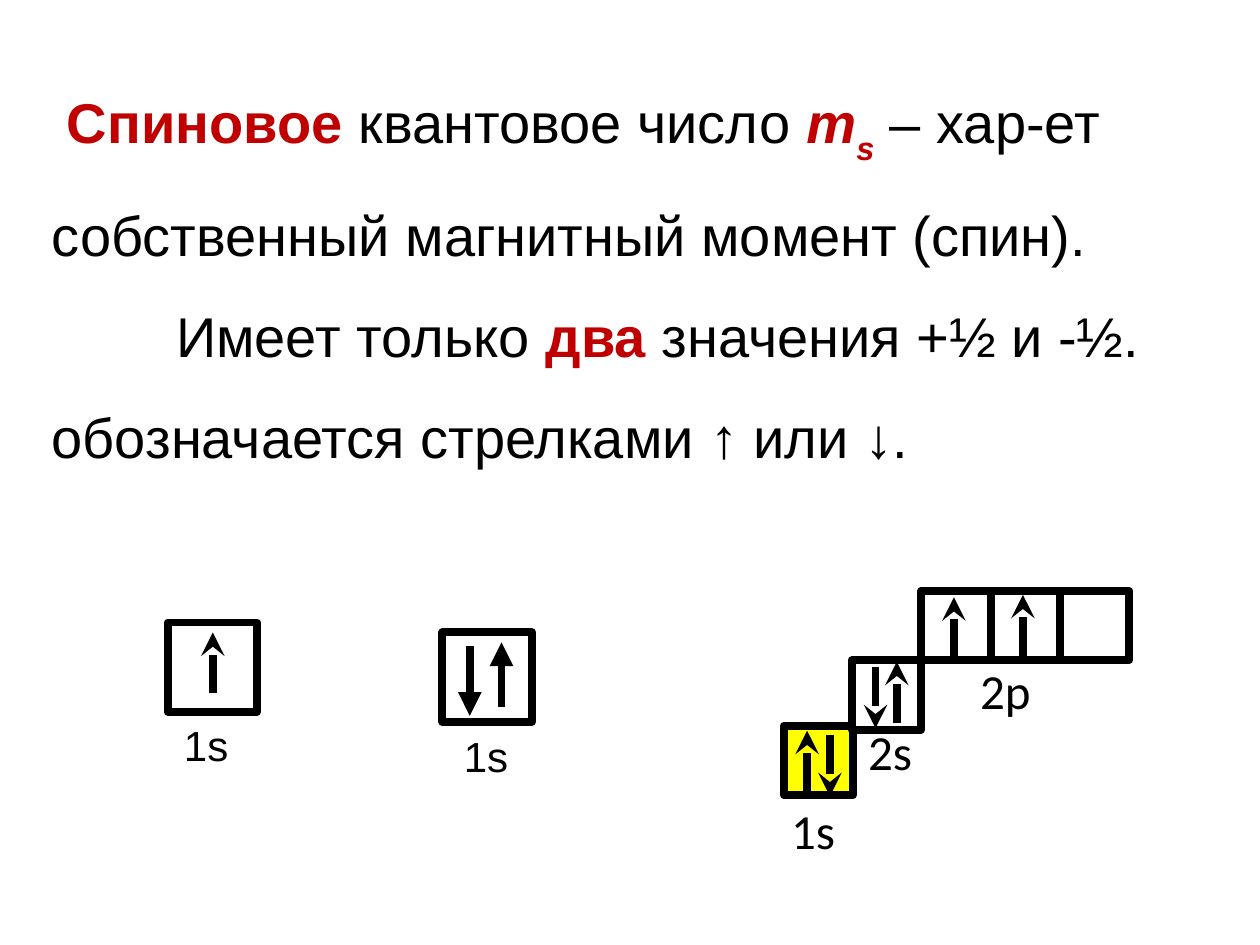
from lxml import etree
from pptx import Presentation
from pptx.dml.color import RGBColor
from pptx.enum.shapes import MSO_CONNECTOR, MSO_SHAPE
from pptx.enum.text import MSO_ANCHOR, PP_ALIGN
from pptx.oxml.ns import qn
from pptx.util import Cm, Pt

RECTANGLE = MSO_SHAPE.RECTANGLE
STRAIGHT = MSO_CONNECTOR.STRAIGHT
TOP, MIDDLE = MSO_ANCHOR.TOP, MSO_ANCHOR.MIDDLE
LEFT, JUSTIFY = PP_ALIGN.LEFT, PP_ALIGN.JUSTIFY

BLACK, WHITE, RED, YELLOW = "000000", "FFFFFF", "C00000", "FFFF00"
LINE_WIDTH = 4.5
LARGE, CELL = 1.8, 1.4

TERM = {"color": RED, "bold": True}
SYMBOL = TERM | {"italic": True}
ARROW_SIGN = {"font": "Times New Roman"}

# Each paragraph: alignment, first-line indent (cm), runs of (text, format)
DEFINITION = [
    (LEFT, 0.31, [
        ("Спиновое", TERM), (" квантовое число ", {}), ("m", SYMBOL),
        ("s", SYMBOL | {"baseline": -30000}),
        (" – хар-ет собственный магнитный момент (спин).", {})]),
    (JUSTIFY, 2.51, [
        ("Имеет только ", {}), ("два", TERM), (" значения +½ и -½.", {})]),
    (JUSTIFY, 0, [
        ("обозначается стрелками ", {}), ("↑", ARROW_SIGN), (" или ", {}),
        ("↓", ARROW_SIGN), (".", {})]),
]

# Orbitals: left, top, cell size, number of cells, fill
ORBITALS = [
    (3.38, 12.55, LARGE, 1, None),
    (8.92, 12.75, LARGE, 1, WHITE),
    (15.8, 14.63, CELL, 1, YELLOW),
    (17.17, 13.31, CELL, 1, WHITE),
    (18.57, 11.91, CELL, 3, None),
]

# Labels: text, left, top, width, height, font, size
LABELS = [
    ("1s", 3.66, 14.5, 1.19, 0.99, "Arial", 24),
    ("1s", 9.3, 14.73, 1.19, 0.99, "Arial", 24),
    ("1s", 15.9, 16.13, 1.8, 1.75, "Calibri", 28),
    ("2s", 17.45, 14.55, 1.65, 1.65, "Calibri", 28),
    ("2р", 19.71, 13.31, 1.93, 1.75, "Calibri", 28),
]

# Electron spins: x, y of the tail, y of the tip, arrowhead
SPINS = [
    (4.29, 13.97, 12.75, "stealth"),
    (9.47, 13.03, 14.43, "triangle"),
    (10.11, 14.25, 12.95, "triangle"),
    (16.27, 15.98, 14.73, "stealth"),
    (16.73, 14.81, 16.05, "stealth"),
    (17.65, 13.44, 14.68, "stealth"),
    (18.08, 14.58, 13.34, "stealth"),
    (19.23, 13.28, 12.04, "stealth"),
    (20.62, 13.23, 11.99, "stealth"),
]


def rgb(color):
    return RGBColor.from_string(color)


def add_run(paragraph, text, font="Arial", size=32, color=BLACK,
            bold=False, italic=False, baseline=None):
    run = paragraph.add_run()
    run.text = text
    run.font.name = font
    run.font.size = Pt(size)
    run.font.bold = bold
    run.font.italic = italic
    run.font.color.rgb = rgb(color)
    if baseline is not None:
        run.font._element.set("baseline", str(baseline))


def add_text(slide, paragraphs, left, top, width, height,
             inset=(0.05, 0), anchor=TOP, spacing=1.0, **run_format):
    frame = slide.shapes.add_textbox(
        Cm(left), Cm(top), Cm(width), Cm(height)).text_frame
    frame.word_wrap = True
    frame.vertical_anchor = anchor
    frame.margin_left = frame.margin_right = Cm(inset[0])
    frame.margin_top = frame.margin_bottom = Cm(inset[1])
    for index, (alignment, indent, runs) in enumerate(paragraphs):
        paragraph = frame.add_paragraph() if index else frame.paragraphs[0]
        paragraph.alignment = alignment
        paragraph.line_spacing = spacing
        paragraph._p.get_or_add_pPr().set("indent", str(Cm(indent)))
        for text, own_format in runs:
            add_run(paragraph, text, **(run_format | own_format))


def add_vertical_line(slide, x, start, end, head=None):
    connector = slide.shapes.add_connector(
        STRAIGHT, Cm(x), Cm(start), Cm(x), Cm(end))
    connector.line.color.rgb = rgb(BLACK)
    connector.line.width = Pt(LINE_WIDTH)
    if head:
        etree.SubElement(connector.line._get_or_add_ln(),
                         qn("a:tailEnd"), type=head)
    etree.SubElement(connector._element.spPr, qn("a:effectLst"))


def add_orbital(slide, left, top, size, cells, fill):
    """Draw a row of cells as one frame with dividers."""
    shape = slide.shapes.add_shape(
        RECTANGLE, Cm(left), Cm(top), Cm(size * cells), Cm(size))
    shape.shadow.inherit = False
    shape.line.color.rgb = rgb(BLACK)
    shape.line.width = Pt(LINE_WIDTH)
    if fill:
        shape.fill.solid()
        shape.fill.fore_color.rgb = rgb(fill)
    else:
        shape.fill.background()
    for cell in range(1, cells):
        add_vertical_line(slide, left + cell * size, top + 0.05, top + size)


def main():
    presentation = Presentation()
    presentation.slide_width = Cm(25.4)
    presentation.slide_height = Cm(19.05)
    slide = presentation.slides.add_slide(presentation.slide_layouts[6])

    add_text(slide, DEFINITION, 0.79, 0.99, 23.6, 8.46,
             inset=(0.25, 0.13), anchor=MIDDLE, spacing=1.5)
    for orbital in ORBITALS:
        add_orbital(slide, *orbital)
    for text, left, top, width, height, font, size in LABELS:
        add_text(slide, [(LEFT, 0, [(text, {})])], left, top, width, height,
                 font=font, size=size)
    for spin in SPINS:
        add_vertical_line(slide, *spin)

    presentation.save("out.pptx")


if __name__ == "__main__":
    main()
